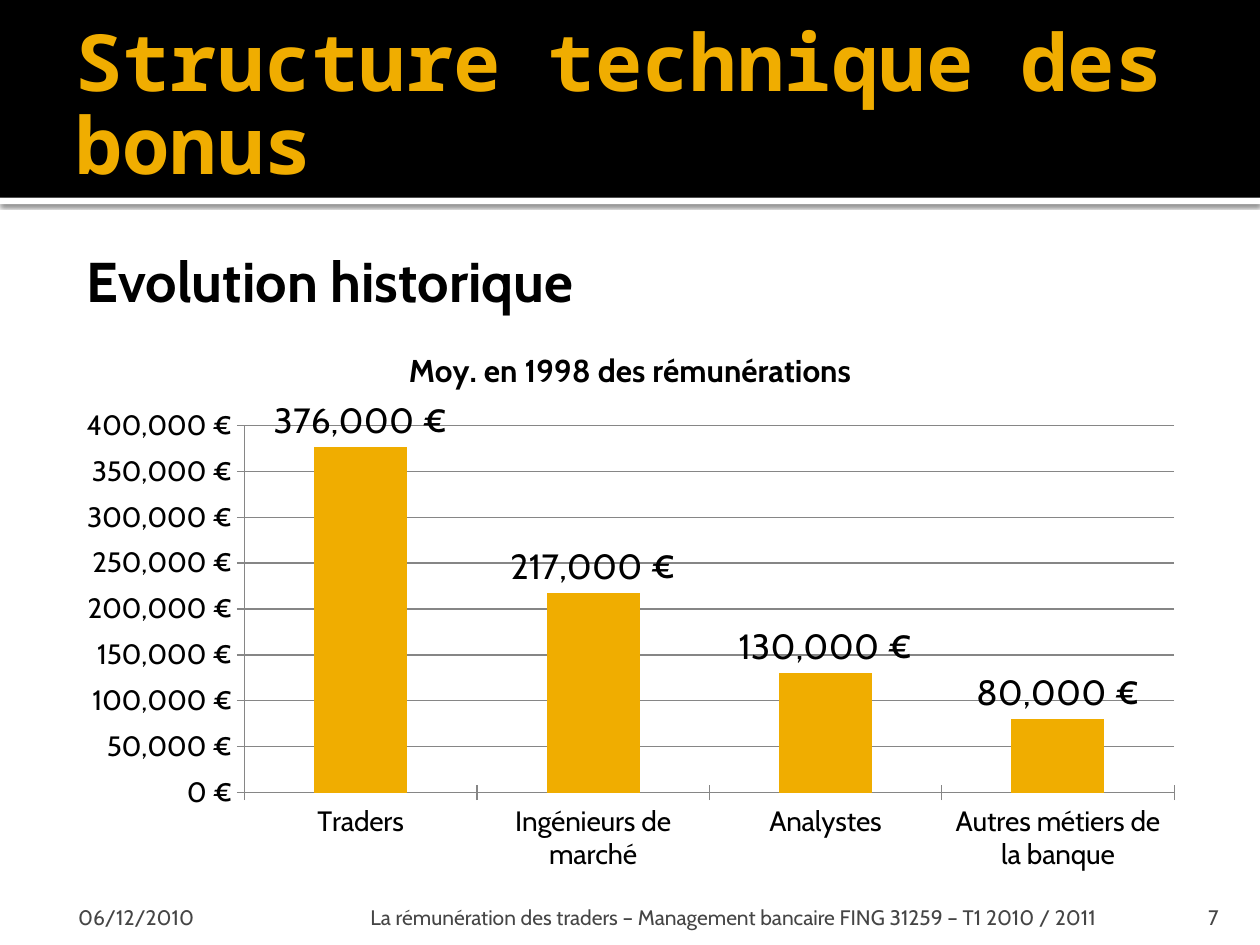
from dataclasses import dataclass, field

from lxml import etree
from pptx import Presentation
from pptx.chart.data import CategoryChartData
from pptx.dml.color import RGBColor
from pptx.enum.chart import XL_CHART_TYPE, XL_LABEL_POSITION, XL_TICK_MARK
from pptx.enum.shapes import MSO_SHAPE
from pptx.enum.text import MSO_ANCHOR, PP_ALIGN
from pptx.oxml import parse_xml
from pptx.oxml.ns import nsdecls, qn
from pptx.util import Emu, Inches, Pt

COLUMNS = XL_CHART_TYPE.COLUMN_CLUSTERED
OUTSIDE_END = XL_LABEL_POSITION.OUTSIDE_END
TICK_CROSS, TICK_NONE = XL_TICK_MARK.CROSS, XL_TICK_MARK.NONE
RECTANGLE = MSO_SHAPE.RECTANGLE
TOP, MIDDLE, BOTTOM = MSO_ANCHOR.TOP, MSO_ANCHOR.MIDDLE, MSO_ANCHOR.BOTTOM
LEFT, RIGHT = PP_ALIGN.LEFT, PP_ALIGN.RIGHT

BLACK = RGBColor(0x00, 0x00, 0x00)
WHITE = RGBColor(0xFF, 0xFF, 0xFF)
GOLD = RGBColor(0xF0, 0xAD, 0x00)
GREY = RGBColor(0x45, 0x45, 0x45)
LINE_GREY = RGBColor(0x86, 0x86, 0x86)

BODY_FONT, TITLE_FONT = "Cabin", "Noto Sans Mono"
EURO_FORMAT = '#,##0\\ "€"'

# Page grid, in inches
WIDTH, HEIGHT = 10, 7.5
MARGIN = 0.5
CONTENT_WIDTH = WIDTH - 2 * MARGIN
BAND_HEIGHT = 1.57
FOOTER_TOP, FOOTER_HEIGHT = 7.08, 0.3

CHART_TITLE = "Moy. en 1998 des rémunérations"
SALARIES = {
    "Traders": 376000,
    "Ingénieurs de marché": 217000,
    "Analystes": 130000,
    "Autres métiers de la banque": 80000,
}
# Inner plot area as shares of the chart's size
PLOT_LAYOUT = {"x": 0.16, "y": 0.18, "w": 0.82, "h": 0.66}


@dataclass
class TextItem:
    text: str
    box: tuple[float, float, float, float]
    insets: tuple[float, float, float, float]
    size: float
    color: RGBColor = GREY
    font: str = BODY_FONT
    bold: bool = False
    anchor: MSO_ANCHOR = BOTTOM
    align: PP_ALIGN = LEFT
    paragraph_format: dict = field(default_factory=dict)
    indent: tuple[float, float] = (0, 0)


def footer(text: str, left: float, width: float, insets: tuple, align=LEFT) -> TextItem:
    return TextItem(text, (left, FOOTER_TOP, width, FOOTER_HEIGHT), insets, 12, align=align)


TEXTS = [
    TextItem("Structure technique des bonus", (MARGIN, 0.17, CONTENT_WIDTH, 1.37),
             (0.1, 0.05, 0.05, 0.05), 45, GOLD, TITLE_FONT, True, MIDDLE,
             paragraph_format={"line_spacing": 0.88}),
    TextItem("Evolution historique", (MARGIN, 1.86, 9.03, 0.78),
             (0.06, 0.1, 0.1, 0.05), 32, BLACK, bold=True, anchor=TOP,
             indent=(0.48, -0.35)),
    footer("06/12/2010", MARGIN, 2.33, (0.12, 0.05, 0.05, 0)),
    footer("La rémunération des traders – Management bancaire FING 31259 – T1 2010 / 2011",
           2.89, 6.02, (0.05, 0.05, 0.05, 0)),
    footer("7", 8.97, 0.8, (0.1, 0.05, 0.1, 0), RIGHT),
]


def set_attributes(target, values: dict) -> None:
    for name, value in values.items():
        setattr(target, name, value)


def set_font(font, size: float, color: RGBColor = BLACK, name: str = BODY_FONT,
             bold: bool = False) -> None:
    set_attributes(font, {"size": Pt(size), "name": name, "bold": bold})
    font.color.rgb = color


def add_band(slide, top: float, height: float, color: RGBColor):
    shape = slide.shapes.add_shape(RECTANGLE, 0, Inches(top), Inches(WIDTH), Inches(height))
    shape.shadow.inherit = False
    shape.fill.solid()
    shape.fill.fore_color.rgb = color
    shape.line.fill.background()
    return shape


def add_shadow(shape, blur: Emu, distance: Emu) -> None:
    effects = shape.element.spPr.find(qn("a:effectLst"))
    effects.append(parse_xml(
        f'<a:outerShdw {nsdecls("a")} blurRad="{blur}" dist="{distance}" dir="5400000" '
        'algn="t" rotWithShape="0"><a:srgbClr val="000000"><a:alpha val="60000"/>'
        '</a:srgbClr></a:outerShdw>'))


def add_text(slide, item: TextItem) -> None:
    frame = slide.shapes.add_textbox(*map(Inches, item.box)).text_frame
    sides = ("margin_left", "margin_top", "margin_right", "margin_bottom")
    set_attributes(frame, dict(zip(sides, map(Inches, item.insets))))
    set_attributes(frame, {"word_wrap": True, "vertical_anchor": item.anchor})
    paragraph = frame.paragraphs[0]
    set_attributes(paragraph, {"alignment": item.align, **item.paragraph_format})
    if any(item.indent):
        properties = paragraph._p.get_or_add_pPr()
        for name, value in zip(("marL", "indent"), item.indent):
            properties.set(name, str(Inches(value)))
    run = paragraph.add_run()
    run.text = item.text
    set_font(run.font, item.size, item.color, item.font, item.bold)


def place_plot(chart) -> None:
    plot_area = chart._chartSpace.chart.plotArea
    for old_layout in plot_area.findall(qn("c:layout")):
        plot_area.remove(old_layout)
    layout = etree.Element(qn("c:layout"))
    manual = etree.SubElement(layout, qn("c:manualLayout"))
    settings = {"layoutTarget": "inner", "xMode": "edge", "yMode": "edge", **PLOT_LAYOUT}
    for name, value in settings.items():
        etree.SubElement(manual, qn(f"c:{name}")).set("val", str(value))
    plot_area.insert(0, layout)


def add_salary_chart(slide) -> None:
    data = CategoryChartData(number_format=EURO_FORMAT)
    data.categories = SALARIES.keys()
    data.add_series(CHART_TITLE, SALARIES.values())
    box = map(Inches, (MARGIN, 2.58, CONTENT_WIDTH, 4.42))
    chart = slide.shapes.add_chart(COLUMNS, *box, data).chart
    set_font(chart.font, 10)
    set_attributes(chart, {"has_legend": False, "has_title": True})
    title = chart.chart_title.text_frame
    title.text = CHART_TITLE
    set_font(title.paragraphs[0].runs[0].font, 18, bold=True)

    # Axes
    for axis in (chart.category_axis, chart.value_axis):
        set_attributes(axis, {"major_tick_mark": TICK_CROSS, "minor_tick_mark": TICK_NONE})
        axis.format.line.color.rgb = LINE_GREY
        set_font(axis.tick_labels.font, 16)
    value_axis = chart.value_axis
    set_attributes(value_axis, {"minimum_scale": 0, "maximum_scale": 400000,
                                "major_unit": 50000, "has_major_gridlines": True})
    value_axis.major_gridlines.format.line.color.rgb = LINE_GREY
    number_format = {"number_format": EURO_FORMAT, "number_format_is_linked": False}
    set_attributes(value_axis.tick_labels, number_format)

    # Columns and their labels
    plot = chart.plots[0]
    set_attributes(plot, {"gap_width": 150, "vary_by_categories": False,
                          "has_data_labels": True})
    fill = plot.series[0].format.fill
    fill.solid()
    fill.fore_color.rgb = GOLD
    set_attributes(plot.data_labels, {"show_value": True, "position": OUTSIDE_END,
                                      **number_format})
    set_font(plot.data_labels.font, 20)
    place_plot(chart)


def main() -> None:
    presentation = Presentation()
    set_attributes(presentation, {"slide_width": Inches(WIDTH), "slide_height": Inches(HEIGHT)})
    slide = presentation.slides.add_slide(presentation.slide_layouts[6])

    # Header band with a shadowed white edge
    add_shadow(add_band(slide, BAND_HEIGHT, 0.05, WHITE), Pt(2.5), Pt(0.8))
    add_band(slide, 0, BAND_HEIGHT, BLACK)

    for item in TEXTS:
        add_text(slide, item)
    add_salary_chart(slide)
    presentation.save("out.pptx")


if __name__ == "__main__":
    main()
